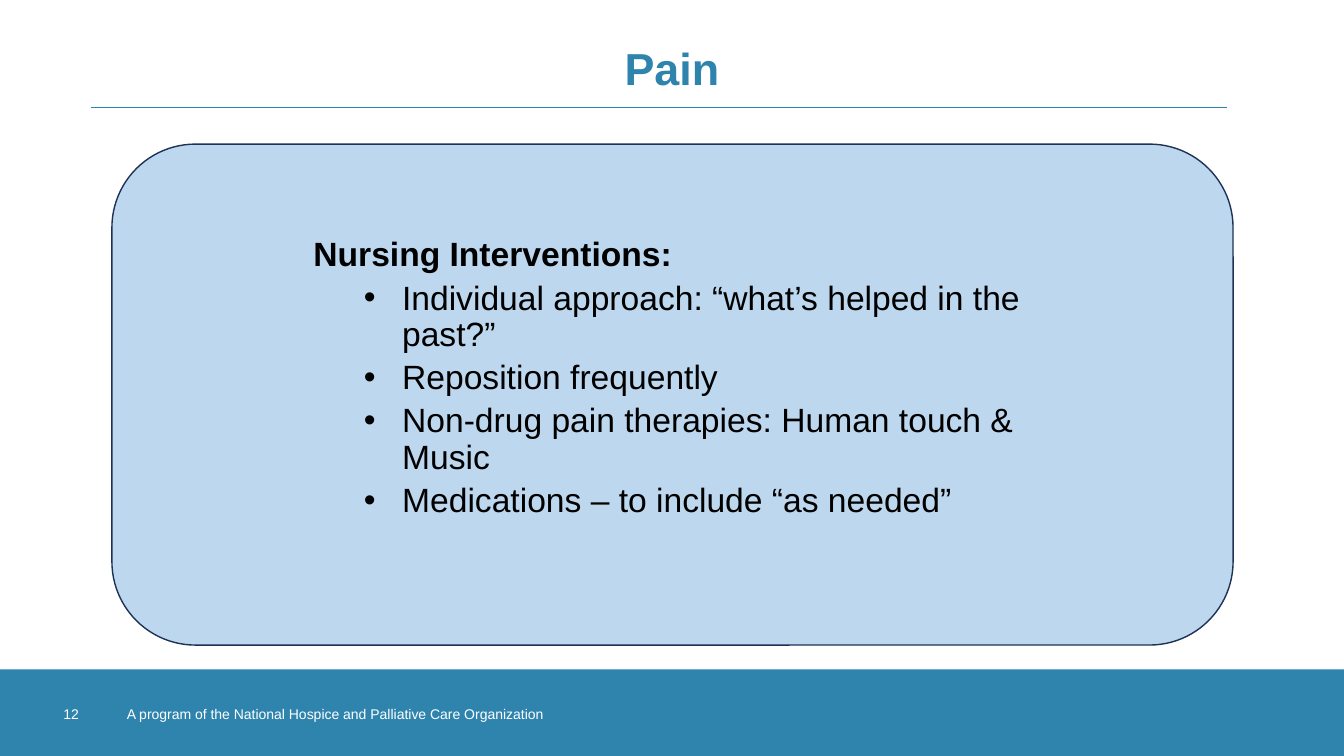
import pptx
import pptx.dml.color
import pptx.enum.shapes
import pptx.enum.text
import pptx.oxml.ns
import pptx.util
from lxml import etree

Inches = pptx.util.Inches
Pt = pptx.util.Pt
SHAPES = pptx.enum.shapes.MSO_SHAPE

COLOURS = {
    "teal": "2F84AE",
    "pale_blue": "BDD7EE",
    "navy": "1E3256",
    "black": "000000",
    "white": "FFFFFF",
}
INTERVENTIONS = [
    "Individual approach: “what’s helped in the past?”",
    "Reposition frequently",
    "Non-drug pain therapies: Human touch & Music",
    "Medications – to include “as needed”",
]


def rgb(name):
    return pptx.dml.color.RGBColor.from_string(COLOURS[name])


def add_panel(slide, kind, box, fill, outline=None):
    panel = slide.shapes.add_shape(kind, *map(Inches, box))
    panel.shadow.inherit = False
    panel.fill.solid()
    panel.fill.fore_color.rgb = rgb(fill)
    if outline:
        panel.line.color.rgb = rgb(outline)
        panel.line.width = Pt(1)
    else:
        panel.line.fill.background()


def add_rule(slide, left, right, y):
    rule = slide.shapes.add_connector(
        pptx.enum.shapes.MSO_CONNECTOR.STRAIGHT,
        Inches(left), Inches(y), Inches(right), Inches(y))
    rule.line.color.rgb = rgb("teal")
    rule.line.width = Pt(0.5)
    etree.SubElement(rule.element.spPr, pptx.oxml.ns.qn("a:effectLst"))


def style(paragraph, size, colour, bold=False):
    for run in paragraph.runs:
        run.font.name = "Arial"
        run.font.size = Pt(size)
        run.font.bold = bold
        run.font.color.rgb = rgb(colour)


def add_text(slide, box, text, size, colour, bold=False):
    """Add a wrapping one-paragraph box and return its text frame."""
    frame = slide.shapes.add_textbox(*map(Inches, box)).text_frame
    frame.word_wrap = True
    frame.text = text
    style(frame.paragraphs[0], size, colour, bold)
    return frame


def add_bullet(frame, text):
    bullet = frame.add_paragraph()
    bullet.text = text
    bullet.level = 1
    properties = bullet._p.get_or_add_pPr()
    properties.set("marL", str(Inches(0.88)))
    properties.set("indent", str(Inches(-0.38)))
    bullet.line_spacing = 0.9
    bullet.space_before = Pt(5)
    for tag, key, value in (("a:buFont", "typeface", "Arial"),
                            ("a:buChar", "char", "•")):
        etree.SubElement(properties, pptx.oxml.ns.qn(tag)).set(key, value)
    style(bullet, 24, "black")


def main():
    deck = pptx.Presentation()
    deck.slide_width = Inches(13.33)
    deck.slide_height = Inches(7.5)
    slide = deck.slides.add_slide(deck.slide_layouts[6])

    add_panel(slide, SHAPES.RECTANGLE, (0, 6.64, 13.33, 0.86), "teal")
    add_panel(slide, SHAPES.ROUNDED_RECTANGLE, (1.11, 1.43, 11.12, 4.97),
              "pale_blue", "navy")

    title = add_text(slide, (0.75, 0.32, 11.83, 0.77), "Pain", 32, "teal", True)
    title.vertical_anchor = pptx.enum.text.MSO_ANCHOR.MIDDLE
    title.paragraphs[0].alignment = pptx.enum.text.PP_ALIGN.CENTER
    title.paragraphs[0].line_spacing = 0.9

    add_text(slide, (1.16, 6.95, 4.63, 0.4),
             "A program of the National Hospice and Palliative Care Organization",
             10, "white")
    add_text(slide, (0.53, 6.95, 0.5, 0.4), "12", 10, "white")

    body = add_text(slide, (3.01, 2.31, 7.32, 3.22),
                    "Nursing Interventions:", 24, "black", True)
    body.paragraphs[0].line_spacing = 0.9
    for intervention in INTERVENTIONS:
        add_bullet(body, intervention)

    add_rule(slide, 0.9, 12.17, 1.07)
    deck.save("out.pptx")


if __name__ == "__main__":
    main()
